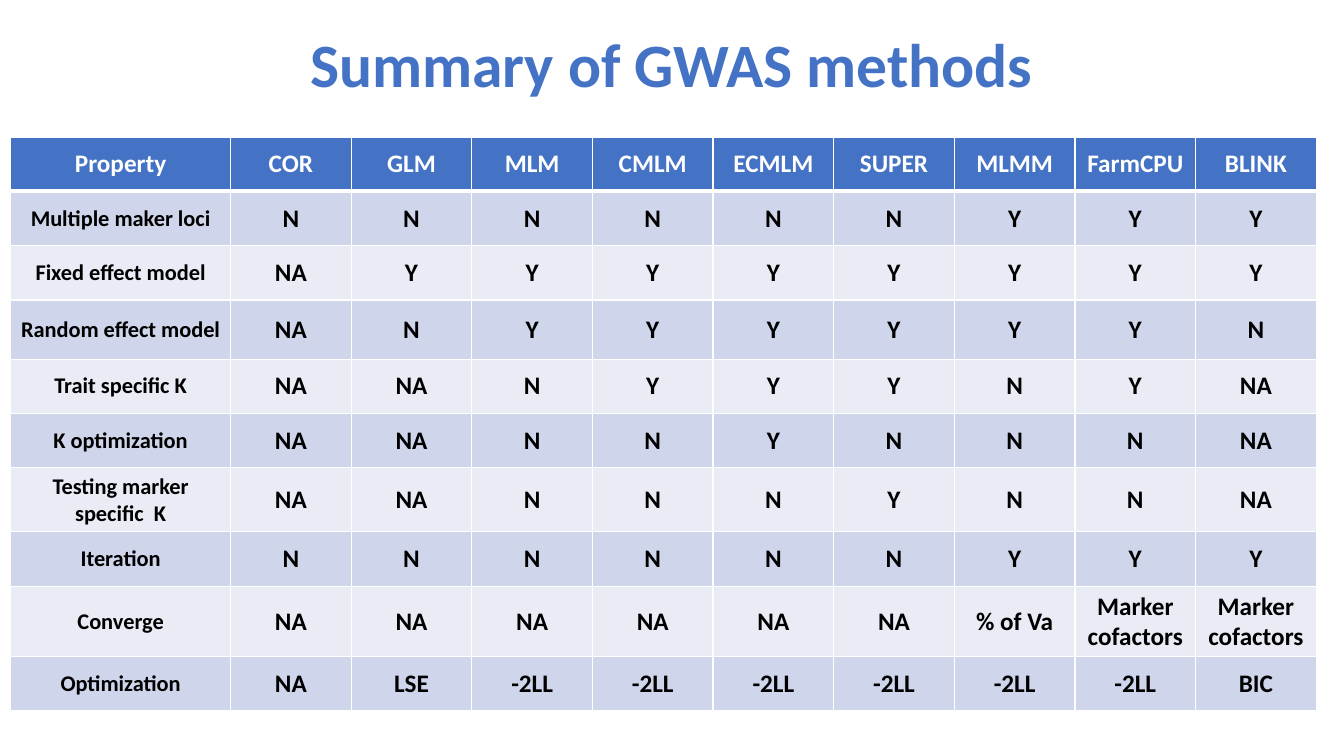
from lxml import etree
from pptx import Presentation
from pptx.dml.color import RGBColor
from pptx.enum.text import MSO_ANCHOR, PP_ALIGN
from pptx.oxml.ns import qn
from pptx.util import Cm, Pt

MID = MSO_ANCHOR.MIDDLE
CENTER = PP_ALIGN.CENTER
HUES = {"blue": "4472C4", "dark": "CFD5EA", "light": "E9EBF5",
        "white": "FFFFFF", "black": "000000"}
FONT = {"name": "Calibri", "bold": True}
FRAME = {"vertical_anchor": MID, "word_wrap": True}
CELL = {"vertical_anchor": MID, "margin_left": Cm(0.22), "margin_right": Cm(0.22)}
FLAGS = {"first_row": True, "horz_banding": True}

ROWS = [
    ("Property", "COR GLM MLM CMLM ECMLM SUPER MLMM FarmCPU BLINK".split()),
    ("Multiple maker loci", "N N N N N N Y Y Y".split()),
    ("Fixed effect model", "NA Y Y Y Y Y Y Y Y".split()),
    ("Random effect model", "NA N Y Y Y Y Y Y N".split()),
    ("Trait specific K", "NA NA N Y Y Y N Y NA".split()),
    ("K optimization", "NA NA N N Y N N N NA".split()),
    ("Testing marker specific  K", "NA NA N N N Y N N NA".split()),
    ("Iteration", "N N N N N N Y Y Y".split()),
    ("Converge", ["NA"] * 6 + ["% of Va"] + ["Marker cofactors"] * 2),
    ("Optimization", ["NA", "LSE"] + ["-2LL"] * 6 + ["BIC"]),
]
HIGH = {3: 1.49, 6: 1.49, 8: 1.65}
ROW_H = 1.37
NAME_W = 5.54


def apply(obj, vals):
    for key, val in vals.items():
        setattr(obj, key, val)


def write(frame, text, size, hue):
    para = frame.paragraphs[0]
    para.alignment = CENTER
    run = para.add_run()
    run.text = text
    apply(run.font, {**FONT, "size": Pt(size)})
    run.font.color.rgb = RGBColor.from_string(HUES[hue])
    return para


def edge(cell, side, width):
    line = etree.SubElement(cell._tc.get_or_add_tcPr(), qn("a:ln" + side),
                            w=str(Pt(width)))
    fill = etree.SubElement(line, qn("a:solidFill"))
    etree.SubElement(fill, qn("a:srgbClr"), val=HUES["white"])


def add_title(slide, left, top, width, height):
    box = slide.shapes.add_textbox(Cm(left), Cm(top), Cm(width), Cm(height))
    apply(box.text_frame, FRAME)
    para = write(box.text_frame, "Summary of GWAS methods", 44, "blue")
    para.line_spacing = 0.9


def fill_cell(cell, text, row, col):
    apply(cell, CELL)
    thick = {"T": row == 1, "B": row == 0}
    for side in "LRTB":
        edge(cell, side, 3 if thick.get(side) else 1)
    band = "blue" if row == 0 else "dark" if row % 2 else "light"
    cell.fill.solid()
    cell.fill.fore_color.rgb = RGBColor.from_string(HUES[band])
    size = 16 if row and col == 0 else 18
    write(cell.text_frame, text, size, "black" if row else "white")


def add_grid(slide, left, top, width):
    count = len(ROWS[0][1])
    highs = [HIGH.get(i, ROW_H) for i in range(len(ROWS))]
    table = slide.shapes.add_table(len(ROWS), count + 1, Cm(left), Cm(top),
                                   Cm(width), Cm(sum(highs))).table
    apply(table, FLAGS)
    for i, col in enumerate(table.columns):
        col.width = Cm((width - NAME_W) / count if i else NAME_W)
    for i, (name, marks) in enumerate(ROWS):
        table.rows[i].height = Cm(highs[i])
        for j, text in enumerate([name, *marks]):
            fill_cell(table.cell(i, j), text, i, j)


def main():
    deck = Presentation()
    apply(deck, {"slide_width": Cm(33.87), "slide_height": Cm(19.05)})
    slide = deck.slides.add_slide(deck.slide_layouts[6])
    add_title(slide, 2.33, 0, 29.21, 3.43)
    add_grid(slide, 0.27, 3.45, 32.9)
    deck.save("out.pptx")


if __name__ == "__main__":
    main()
